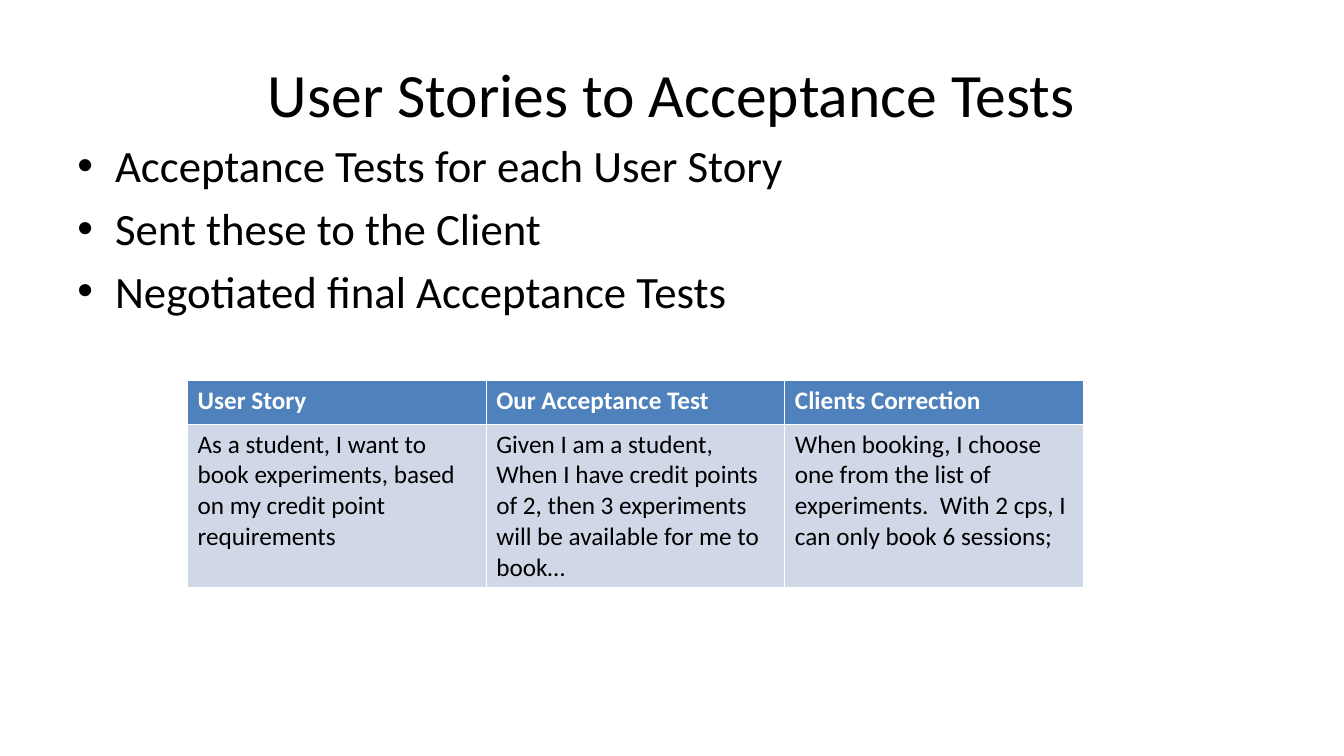
from pptx import Presentation
from pptx.dml.color import RGBColor
from pptx.enum import text
from pptx.util import Pt

BLACK = RGBColor(0x00, 0x00, 0x00)
WHITE = RGBColor(0xFF, 0xFF, 0xFF)
HEADER_BLUE = RGBColor(0x4F, 0x81, 0xBD)
ROW_BLUE = RGBColor(0xD0, 0xD8, 0xE8)


class SlideBuilder:
    """Holds the text style and the current slide."""

    font_name = "Calibri"

    def __init__(self, slide):
        self.slide = slide

    def fill_text(self, frame, lines, size, color, bold=False):
        frame.text = "\n".join(lines)
        for paragraph in frame.paragraphs:
            font = paragraph.font
            font.name, font.size, font.bold = self.font_name, Pt(size), bold
            font.color.rgb = color

    def place(self, holder, left, top, width, height):
        holder.left, holder.top = Pt(left), Pt(top)
        holder.width, holder.height = Pt(width), Pt(height)
        holder.text_frame.auto_size = text.MSO_AUTO_SIZE.NONE

    def title(self, wording, box):
        heading = self.slide.shapes.title
        self.place(heading, *box)
        heading.text_frame.vertical_anchor = text.MSO_ANCHOR.MIDDLE
        self.fill_text(heading.text_frame, [wording], 44, BLACK)
        heading.text_frame.paragraphs[0].alignment = text.PP_ALIGN.CENTER

    def bullets(self, points, box):
        body = self.slide.placeholders[1]
        self.place(body, *box)
        self.fill_text(body.text_frame, points, 32, BLACK)

    def table(self, rows, box, row_heights):
        stories = self.slide.shapes.add_table(
            len(rows), len(rows[0]), *map(Pt, box)).table
        for r, (row, height) in enumerate(zip(rows, row_heights)):
            header = r == 0
            stories.rows[r].height = Pt(height)
            for c, lines in enumerate(row):
                cell = stories.cell(r, c)
                cell.fill.solid()
                cell.fill.fore_color.rgb = HEADER_BLUE if header else ROW_BLUE
                self.fill_text(cell.text_frame, lines, 18,
                               WHITE if header else BLACK, header)


def main():
    deck = Presentation()
    deck.slide_width, deck.slide_height = Pt(960), Pt(540)
    page = SlideBuilder(deck.slides.add_slide(deck.slide_layouts[1]))

    # Title and list
    page.title("User Stories to Acceptance Tests", (48, 21.6, 864, 90))
    page.bullets(["Acceptance Tests for each User Story",
                  "Sent these to the Client",
                  "Negotiated final Acceptance Tests"],
                 (48, 95, 864, 356.4))

    # Example story, its test and the client's answer
    page.table([
        [["User Story"], ["Our Acceptance Test"], ["Clients Correction"]],
        [["As a student, I want to book experiments, based on my credit "
          "point requirements"],
         ["Given I am a student,",
          "When I have credit points of 2, then 3 experiments will be "
          "available for me to book…"],
         ["When booking, I choose one from the list of experiments.  "
          "With 2 cps, I can only book 6 sessions;"]],
    ], (134, 271.5, 640, 147), (31.5, 115.5))

    deck.save("out.pptx")


if __name__ == "__main__":
    main()
